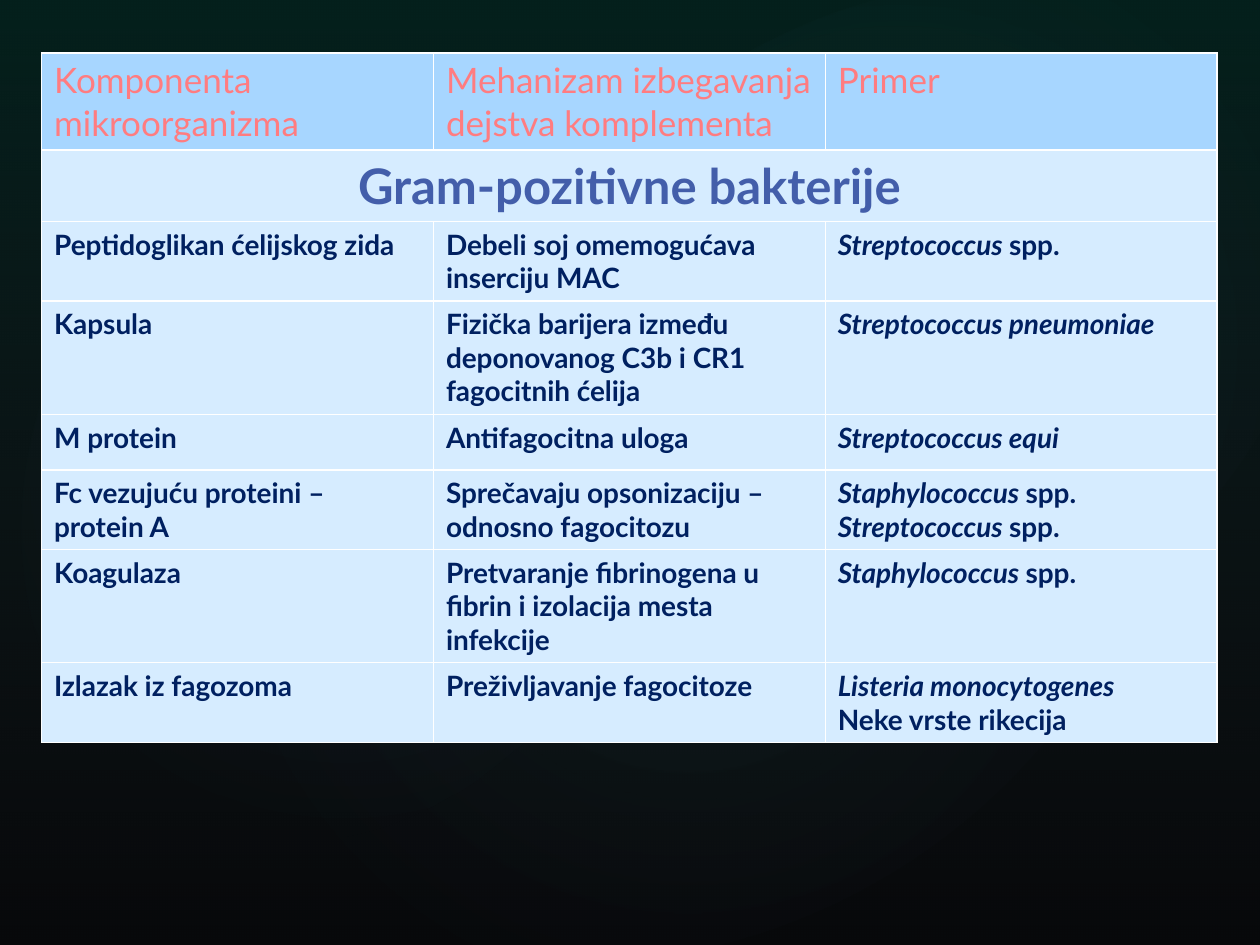
import lxml.etree
import pptx
import pptx.dml.color
import pptx.enum.shapes
import pptx.enum.text
import pptx.oxml
import pptx.oxml.ns
import pptx.util
from pptx.util import Inches

FONT = "Lato"
HEADERS = ["Komponenta mikroorganizma", "Mehanizam izbegavanja dejstva komplementa", "Primer"]
SECTION = "Gram-pozitivne bakterije"
ROWS = [
    ("Peptidoglikan ćelijskog zida", "Debeli soj omemogućava inserciju MAC", ["*Streptococcus *spp."]),
    ("Kapsula", "Fizička barijera između deponovanog C3b i CR1 fagocitnih ćelija",
     ["*Streptococcus pneumoniae*"]),
    ("M protein", "Antifagocitna uloga", ["*Streptococcus equi*"]),
    ("Fc vezujuću proteini – protein A", "Sprečavaju opsonizaciju – odnosno fagocitozu",
     ["*Staphylococcus *spp.", "*Streptococcus *spp."]),
    ("Koagulaza", "Pretvaranje fibrinogena u fibrin i izolacija mesta infekcije", ["*Staphylococcus *spp."]),
    ("Izlazak iz fagozoma", "Preživljavanje fagocitoze", ["*Listeria monocytogenes*", "Neke vrste rikecija"]),
]
ROW_HEIGHTS = [0.77, 0.56, 0.63, 0.9, 0.44, 0.63, 0.9, 0.63]
GLOWS = [
    (1.5, 1.14, 7.92, 6.24, 328.7, 7),
    (-0.3, 1.28, 6.06, 4.9, 294.3, 8),
    (3.58, 0.13, 7.09, 5.2, 328.7, 8),
]
LINEAR = '<a:lin ang="5400000" scaled="0"/>'
RADIAL = '<a:path path="circle"><a:fillToRect l="50000" t="50000" r="50000" b="50000"/></a:path>'


def color(hex_value):
    return pptx.dml.color.RGBColor.from_string(hex_value)


def add_gradient_shape(slide, kind, box, stops, direction, rotation=0):
    shape = slide.shapes.add_shape(kind, *[Inches(value) for value in box])
    shape.shadow.inherit = False
    shape.rotation = rotation
    shape.line.fill.background()
    stop_xml = "".join(
        f'<a:gs pos="{position * 1000}"><a:srgbClr val="{hex_value}">'
        f'<a:alpha val="{opacity * 1000}"/></a:srgbClr></a:gs>'
        for position, hex_value, opacity in stops
    )
    gradient = pptx.oxml.parse_xml(
        f'<a:gradFill {pptx.oxml.ns.nsdecls("a")} rotWithShape="1">'
        f"<a:gsLst>{stop_xml}</a:gsLst>{direction}</a:gradFill>"
    )
    shape.element.spPr.find(pptx.oxml.ns.qn("a:prstGeom")).addnext(gradient)


def add_background(slide):
    fill = slide.background.fill
    fill.solid()
    fill.fore_color.rgb = color("000000")
    shapes = pptx.enum.shapes.MSO_SHAPE
    add_gradient_shape(slide, shapes.RECTANGLE, (0, 0, 10, 7.5),
                       [(0, "0D5A4F", 36), (100, "4E5B6F", 10)], LINEAR)
    for *box, rotation, opacity in GLOWS:
        add_gradient_shape(slide, shapes.OVAL, box,
                           [(0, "5FE8D6", opacity), (58, "4E5B6F", 0)], RADIAL, rotation)


def set_borders(cell):
    properties = cell._tc.get_or_add_tcPr()
    for index, side in enumerate(("lnL", "lnR", "lnT", "lnB")):
        border = pptx.oxml.parse_xml(
            f'<a:{side} {pptx.oxml.ns.nsdecls("a")} w="12700">'
            '<a:solidFill><a:srgbClr val="FFFFFF"/></a:solidFill>'
            f"</a:{side}>"
        )
        properties.insert(index, border)


def style_cell(cell, fill):
    cell.fill.solid()
    cell.fill.fore_color.rgb = color(fill)
    set_borders(cell)


def write_cell(cell, lines, size, text_color, bold=True, alignment=pptx.enum.text.PP_ALIGN.LEFT):
    frame = cell.text_frame
    for index, line in enumerate(lines):
        paragraph = frame.add_paragraph() if index else frame.paragraphs[0]
        paragraph.alignment = alignment
        for part_index, part in enumerate(line.split("*")):
            if part:
                run = paragraph.add_run()
                run.text = part
                run.font.name = FONT
                run.font.size = pptx.util.Pt(size)
                run.font.bold = bold
                run.font.italic = part_index % 2 == 1
                run.font.color.rgb = color(text_color)


def add_bacteria_table(slide):
    frame = slide.shapes.add_table(len(ROW_HEIGHTS), len(HEADERS), Inches(0.33), Inches(0.42),
                                   Inches(9.33), Inches(sum(ROW_HEIGHTS)))
    table = frame.table
    table.first_row = False
    table.horz_banding = False
    for column in table.columns:
        column.width = Inches(3.11)
    for index, (row, height) in enumerate(zip(table.rows, ROW_HEIGHTS)):
        row.height = Inches(height)
        for cell in row.cells:
            style_cell(cell, "D6ECFF" if index else "A7D6FF")
    for column, header in enumerate(HEADERS):
        write_cell(table.cell(0, column), [header], 20, "FF7C80", bold=False)
    table.cell(1, 0).merge(table.cell(1, 2))
    write_cell(table.cell(1, 0), [SECTION], 28, "435EAA", alignment=pptx.enum.text.PP_ALIGN.CENTER)
    for index, (component, mechanism, examples) in enumerate(ROWS, start=2):
        for column, lines in enumerate(([component], [mechanism], examples)):
            write_cell(table.cell(index, column), lines, 16, "002060")


def main():
    presentation = pptx.Presentation()
    presentation.slide_width = Inches(10)
    presentation.slide_height = Inches(7.5)
    slide = presentation.slides.add_slide(presentation.slide_layouts[6])
    add_background(slide)
    add_bacteria_table(slide)
    presentation.save("out.pptx")


if __name__ == "__main__":
    main()
